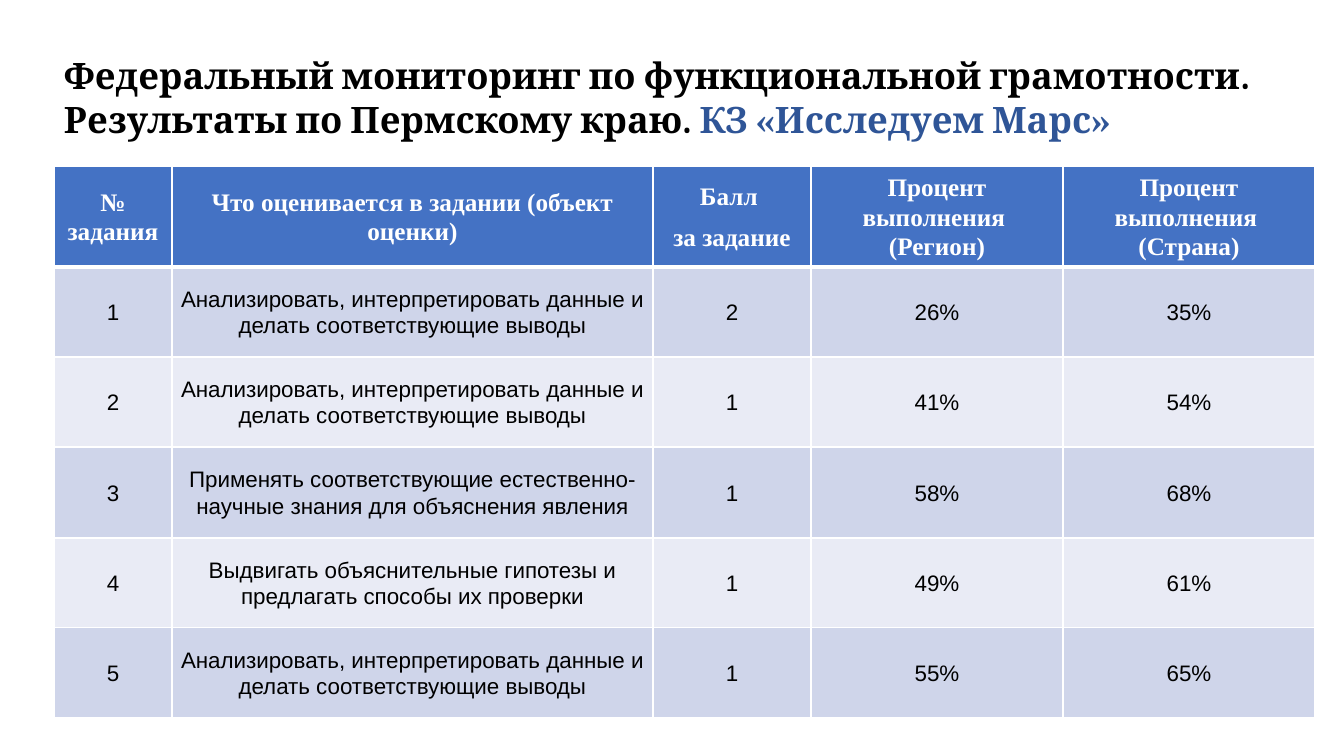
from lxml import etree
from pptx import Presentation, util as u
from pptx.dml.color import RGBColor
from pptx.enum import text
from pptx.oxml import ns

BLACK = RGBColor(0x00, 0x00, 0x00)
WHITE = RGBColor(0xFF, 0xFF, 0xFF)
NAVY = RGBColor(0x2F, 0x55, 0x97)
BLUE = RGBColor(0x44, 0x72, 0xC4)
BAND = RGBColor(0xCF, 0xD5, 0xEA)
PALE = RGBColor(0xE9, 0xEB, 0xF5)

TITLE = {"name": "Cambria", "size": u.Pt(26), "bold": True}
HEAD = {"name": "Times New Roman", "size": u.Pt(18), "bold": True}
BODY = {"name": "Arial", "size": u.Pt(16), "bold": False}
PARAGRAPH = {"alignment": text.PP_ALIGN.CENTER, "line_spacing": 1.07,
             "space_after": u.Pt(8)}

DATA = "Анализировать, интерпретировать данные и делать соответствующие выводы"
KNOWLEDGE = "Применять соответствующие естественно-научные знания для объяснения явления"
HYPOTHESES = "Выдвигать объяснительные гипотезы и предлагать способы их проверки"
ROWS = [
    ("№ задания", "Что оценивается в задании (объект оценки)",
     "Балл \nза задание", "Процент выполнения \v(Регион)",
     "Процент выполнения \v(Страна)"),
    ("1", DATA, "2", "26%", "35%"),
    ("2", DATA, "1", "41%", "54%"),
    ("3", KNOWLEDGE, "1", "58%", "68%"),
    ("4", HYPOTHESES, "1", "49%", "61%"),
    ("5", DATA, "1", "55%", "65%"),
]
COLUMN_WIDTHS = (118, 481, 158, 252, 252)
ROW_HEIGHTS = (101, 90, 90, 91, 90, 90)


def apply(target, values):
    """Set every attribute named in values on the target."""
    for name, value in values.items():
        setattr(target, name, value)


class Deck:
    """Holds the presentation, the current slide and its style."""

    def __init__(self, width, height):
        """Create a presentation with one blank slide."""
        self.prs = Presentation()
        self.prs.slide_width, self.prs.slide_height = self.px(width, height)
        self.s = self.prs.slides.add_slide(self.prs.slide_layouts[6])

    def px(self, *lengths):
        """Turn px lengths into EMU."""
        return [u.Emu(round(n * 914400 / 100.8)) for n in lengths]

    def style(self, r, font, color):
        """Format one run."""
        apply(r.font, font)
        r.font.color.rgb = color

    def title(self, box, parts):
        """Add a text box made of coloured parts."""
        tf = self.s.shapes.add_textbox(*self.px(*box)).text_frame
        apply(tf, {"word_wrap": True, "auto_size": text.MSO_AUTO_SIZE.SHAPE_TO_FIT_TEXT})
        for words, color in parts:
            r = tf.paragraphs[0].add_run()
            r.text = words
            self.style(r, TITLE, color)

    def border(self, cell, widths):
        """Draw white cell borders, widths in points by side."""
        tc_pr = cell._tc.get_or_add_tcPr()
        for i, (side, width) in enumerate(widths.items()):
            ln = etree.Element(ns.qn(f"a:ln{side}"), w=str(u.Pt(width)))
            fill = etree.SubElement(ln, ns.qn("a:solidFill"))
            etree.SubElement(fill, ns.qn("a:srgbClr"), val=str(WHITE))
            tc_pr.insert(i, ln)

    def cell(self, cell, words, font, color, fill):
        """Fill and format one table cell."""
        side = self.px(7)[0]
        apply(cell, {"vertical_anchor": text.MSO_ANCHOR.MIDDLE, "margin_left": side,
                     "margin_right": side, "margin_top": 0, "margin_bottom": 0})
        cell.fill.solid()
        cell.fill.fore_color.rgb = fill
        cell.text_frame.text = words
        for p in cell.text_frame.paragraphs:
            apply(p, PARAGRAPH)
            for r in p.runs:
                self.style(r, font, color)

    def table(self, left, top, widths, heights, rows):
        """Add a table with a header row and banded body rows."""
        box = self.px(left, top, sum(widths), sum(heights))
        table = self.s.shapes.add_table(len(rows), len(widths), *box).table
        for column, width in zip(table.columns, self.px(*widths)):
            column.width = width
        for row, height in zip(table.rows, self.px(*heights)):
            row.height = height
        for i, row in enumerate(rows):
            look = (BODY, BLACK, BAND if i % 2 else PALE) if i else (HEAD, WHITE, BLUE)
            sides = {"L": 1, "R": 1, "T": 3 if i == 1 else 1, "B": 1 if i else 3}
            for j, words in enumerate(row):
                self.cell(table.cell(i, j), words, *look)
                self.border(table.cell(i, j), sides)


def main():
    """Build the slide and save it."""
    deck = Deck(1344, 756)
    deck.table(54, 166, COLUMN_WIDTHS, ROW_HEIGHTS, ROWS)
    deck.title((54, 48, 1261, 99), [
        ("Федеральный мониторинг по функциональной грамотности. "
         "Результаты по Пермскому краю. ", BLACK),
        ("КЗ «Исследуем Марс»", NAVY)])
    deck.prs.save("out.pptx")


if __name__ == "__main__":
    main()
